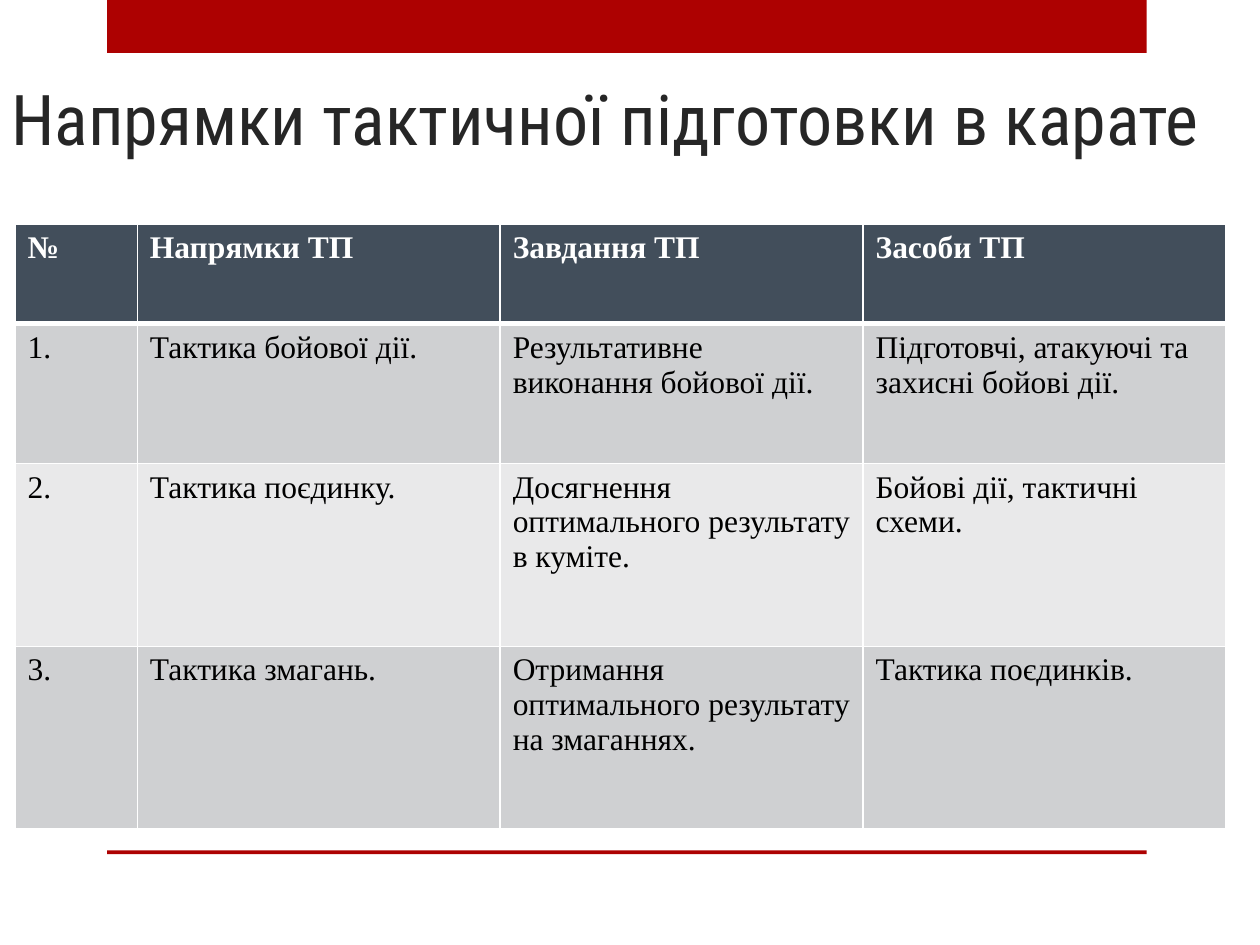
from pptx import Presentation
from pptx.dml.color import RGBColor as RGB
from pptx.enum.shapes import MSO_SHAPE as Shape
from pptx.enum.text import MSO_ANCHOR as Anchor, PP_ALIGN as Align
from pptx.oxml.ns import qn
from pptx.util import Inches, Pt
from lxml.etree import SubElement as Sub

HUES = {"red": "AD0101", "title": "262626", "head": "424E5B", "odd": "CFD0D2",
        "even": "E9E9EA", "white": "FFFFFF", "black": "000000"}
ROWS = [
    ["№", "Напрямки ТП", "Завдання ТП", "Засоби ТП"],
    ["1.", "Тактика бойової дії.", "Результативне виконання бойової дії.",
     "Підготовчі, атакуючі та захисні бойові дії."],
    ["2.", "Тактика поєдинку.", "Досягнення оптимального результату в куміте.",
     "Бойові дії, тактичні схеми."],
    ["3.", "Тактика змагань.", "Отримання оптимального результату на змаганнях.",
     "Тактика поєдинків."],
]
WIDTHS = [0.97, 2.88, 2.88, 2.88]
HEIGHTS = [0.79, 1.11, 1.45, 1.45]


def style(run, font, size, hue, bold=False):
    run.font.name = font
    run.font.size = Pt(size)
    run.font.bold = bold
    run.font.color.rgb = RGB.from_string(HUES[hue])


def edge(cell, side, width):
    line = Sub(cell._tc.get_or_add_tcPr(), qn("a:ln" + side), w=str(Pt(width)))
    fill = Sub(line, qn("a:solidFill"))
    Sub(fill, qn("a:srgbClr"), val=HUES["white"])


deck = Presentation()
deck.slide_width, deck.slide_height = Inches(10), Inches(7.5)
slide = deck.slides.add_slide(deck.slide_layouts[5])

for top, height in [(0, 0.42), (6.75, 0.03)]:
    bar = slide.shapes.add_shape(Shape.RECTANGLE, Inches(0.85), Inches(top),
                                 Inches(8.25), Inches(height))
    bar.shadow.inherit = False
    bar.fill.solid()
    bar.fill.fore_color.rgb = RGB.from_string(HUES["red"])
    bar.line.fill.background()

title = slide.shapes.title
title.left, title.top = Inches(-0.01), Inches(0.13)
title.width, title.height = Inches(11.02), Inches(1.19)
frame = title.text_frame
frame.text = "Напрямки тактичної підготовки в карате"
frame.vertical_anchor = Anchor.BOTTOM
frame.paragraphs[0].alignment = Align.LEFT
style(frame.paragraphs[0].runs[0], "Roboto Condensed", 40, "title")

table = slide.shapes.add_table(len(ROWS), len(WIDTHS), Inches(0.12), Inches(1.78),
                               Inches(sum(WIDTHS)), Inches(sum(HEIGHTS))).table
for col, width in zip(table.columns, WIDTHS):
    col.width = Inches(width)
for r, (row, height) in enumerate(zip(ROWS, HEIGHTS)):
    table.rows[r].height = Inches(height)
    head = r == 0
    shade = "head" if head else "odd" if r % 2 else "even"
    for c, text in enumerate(row):
        cell = table.cell(r, c)
        cell.text_frame.text = text
        style(cell.text_frame.paragraphs[0].runs[0], "Times New Roman", 18,
              "white" if head else "black", head)
        for side in "LRTB":
            thick = (head and side == "B") or (r == 1 and side == "T")
            edge(cell, side, 3 if thick else 1)
        cell.fill.solid()
        cell.fill.fore_color.rgb = RGB.from_string(HUES[shade])

deck.save("out.pptx")
